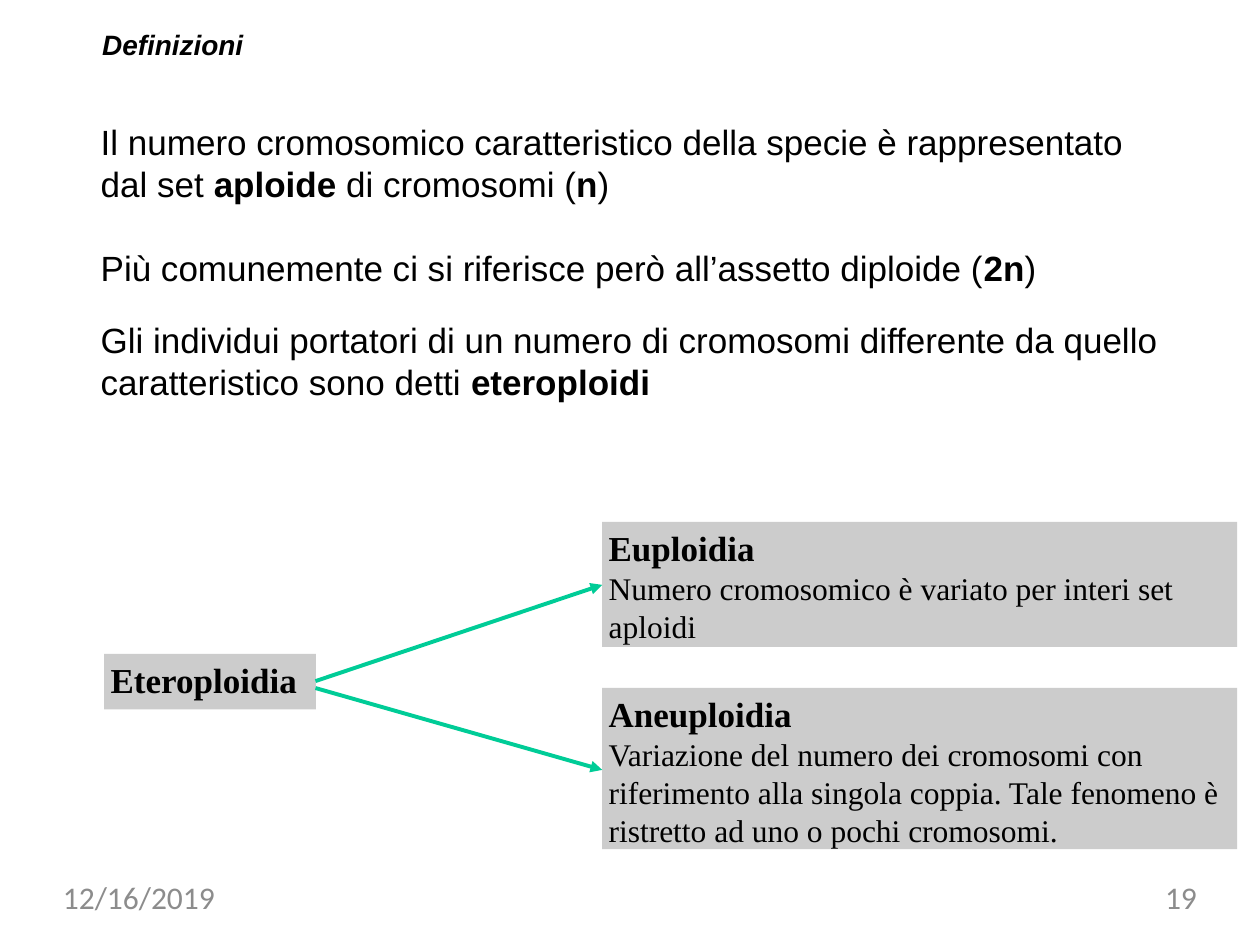
from lxml.etree import SubElement
from pptx import Presentation
from pptx.dml.color import RGBColor
from pptx.enum.shapes import MSO_CONNECTOR, MSO_SHAPE
from pptx.enum.text import MSO_ANCHOR, MSO_AUTO_SIZE, PP_ALIGN
from pptx.oxml.ns import qn
from pptx.util import Cm, Pt

BLACK = RGBColor(0x00, 0x00, 0x00)
GRAY = RGBColor(0x8C, 0x8C, 0x8C)
PANEL = RGBColor(0xCC, 0xCC, 0xCC)
GREEN = RGBColor(0x00, 0xCC, 0x97)
ARIAL, TIMES, CALIBRI = "Arial", "Times New Roman", "Calibri"

# A paragraph is a list of runs; every second run is bold.
TITLE = [
    ["Il numero cromosomico caratteristico della specie è rappresentato "
     "dal set ", "aploide", " di cromosomi (", "n", ")"],
]
BODY = [
    ["Più comunemente ci si riferisce però all’assetto diploide (", "2n", ")"],
    ["Gli individui portatori di un numero di cromosomi differente da quello "
     "caratteristico sono detti ", "eteroploidi"],
]
HEADING = "Definizioni"

# left, top, width, height in cm; term; definition
PANELS = [
    ((2.1, 13.18, 4.27, 1.12), "Eteroploidia", None),
    ((12.14, 10.52, 12.8, 2.52), "Euploidia",
     "Numero cromosomico è variato per interi set aploidi"),
    ((12.14, 13.87, 12.8, 3.25), "Aneuploidia",
     "Variazione del numero dei cromosomi con riferimento alla singola "
     "coppia. Tale fenomeno è ristretto ad uno o pochi cromosomi."),
]
# x, y of tail and head in cm
ARROWS = [(6.36, 13.73, 12.14, 11.79), (6.36, 13.87, 12.14, 15.52)]
FOOTER = [(1.27, "12/16/2019", PP_ALIGN.LEFT), (18.29, "19", PP_ALIGN.RIGHT)]


def write(shape, paragraphs, font, size, color=BLACK, left=0.0, top=0.0,
          align=PP_ALIGN.LEFT, gap=0):
    """Fill a shape with paragraphs of alternating regular and bold runs."""
    tf = shape.text_frame
    tf.word_wrap = True
    tf.auto_size = MSO_AUTO_SIZE.NONE
    tf.vertical_anchor = MSO_ANCHOR.TOP
    tf.margin_left, tf.margin_top = Cm(left), Cm(top)
    tf.margin_right = tf.margin_bottom = 0
    for i, runs in enumerate(paragraphs):
        p = tf.add_paragraph() if i else tf.paragraphs[0]
        p.alignment = align
        p.line_spacing = 1.0
        p.space_before = Pt(gap if i else 0)
        p.font.name, p.font.size = font, Pt(size)
        p.font.color.rgb = color
        for j, text in enumerate(runs):
            r = p.add_run()
            r.text = text
            if j % 2:
                r.font.bold = True
    return tf


def add_text(s, box, paragraphs, *args, **kwargs):
    return write(s.shapes.add_textbox(*map(Cm, box)), paragraphs, *args, **kwargs)


def add_panel(s, box, term, definition):
    sp = s.shapes.add_shape(MSO_SHAPE.RECTANGLE, *map(Cm, box))
    sp.shadow.inherit = False
    sp.fill.solid()
    sp.fill.fore_color.rgb = PANEL
    sp.line.fill.background()
    paragraphs = [[term]] + ([[definition]] if definition else [])
    tf = write(sp, paragraphs, TIMES, 18, left=0.13, top=0.1)
    tf.paragraphs[0].font.size = Pt(20)
    tf.paragraphs[0].font.bold = True


def add_arrow(s, ends):
    c = s.shapes.add_connector(MSO_CONNECTOR.STRAIGHT, *map(Cm, ends))
    c.line.color.rgb = GREEN
    c.line.width = Pt(2.25)
    SubElement(c.line._get_or_add_ln(), qn("a:tailEnd"), type="triangle")
    SubElement(c._element.spPr, qn("a:effectLst"))


def main():
    prs = Presentation()
    prs.slide_width, prs.slide_height = Cm(25.4), Cm(19.05)
    s = prs.slides.add_slide(prs.slide_layouts[5])

    title = s.shapes.title
    title.left, title.top, title.width, title.height = map(
        Cm, (1.98, 2.39, 21, 1.78))
    write(title, TITLE, ARIAL, 20, left=0.05, top=0.03)

    add_text(s, (1.98, 4.93, 21.6, 3.23), BODY, ARIAL, 20,
             left=0.05, top=0.03, gap=17.4)
    tf = add_text(s, (2.01, 0.53, 3.2, 0.74), [[HEADING]], ARIAL, 16,
                  left=0.05, top=0.03)
    tf.paragraphs[0].font.bold = tf.paragraphs[0].font.italic = True

    for panel in PANELS:
        add_panel(s, *panel)
    for ends in ARROWS:
        add_arrow(s, ends)
    for left, text, align in FOOTER:
        add_text(s, (left, 17.7, 5.84, 0.97), [[text]], CALIBRI, 18, GRAY,
                 align=align)

    prs.save("out.pptx")


if __name__ == "__main__":
    main()
